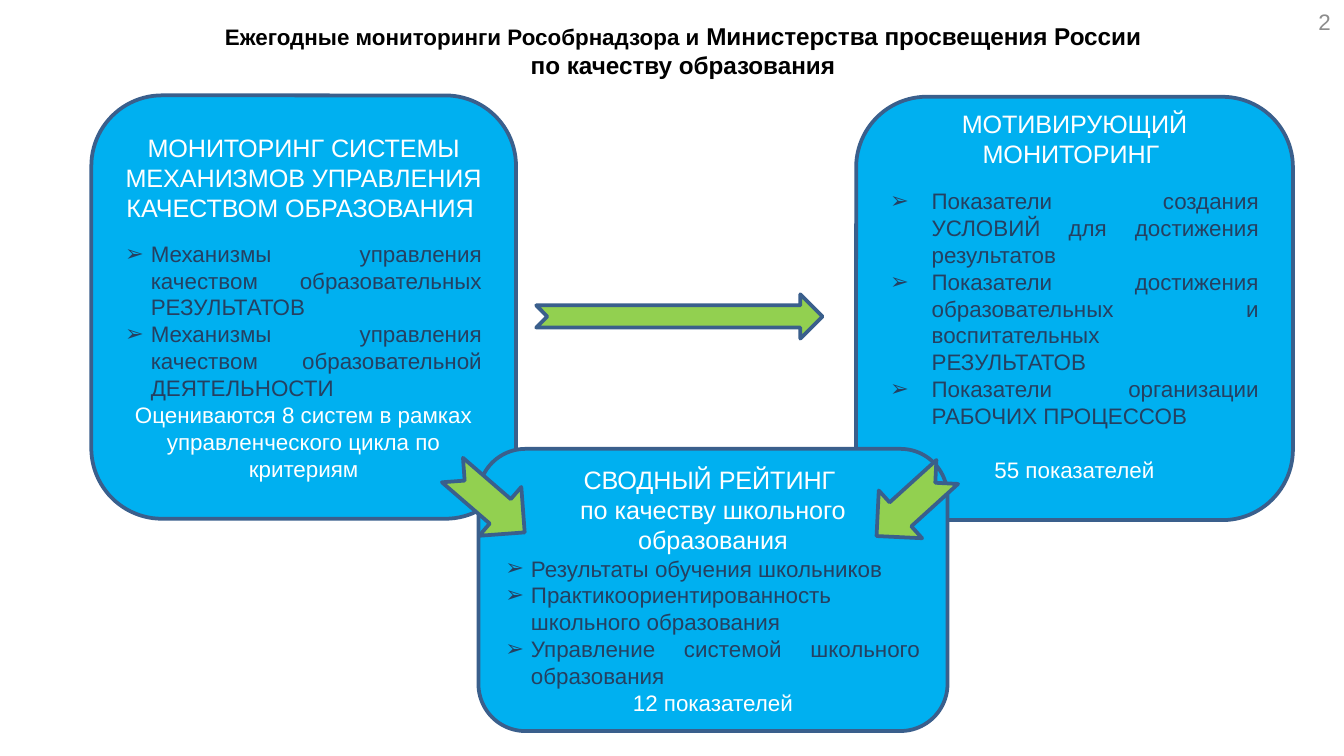
from lxml import etree
from pptx import Presentation
from pptx.dml.color import RGBColor
from pptx.enum import shapes, text
from pptx.oxml.ns import qn
from pptx.util import Inches, Pt

BLUE = RGBColor(0x00, 0xB0, 0xF0)
GREEN = RGBColor(0x92, 0xD0, 0x50)
OUTLINE = RGBColor(0x3A, 0x5F, 0x8C)
NAVY = RGBColor(0x25, 0x40, 0x61)
WHITE = RGBColor(0xFF, 0xFF, 0xFF)
BLACK = RGBColor(0x00, 0x00, 0x00)
GREY = RGBColor(0x8C, 0x8C, 0x8C)

SHAPE = shapes.MSO_SHAPE
ALIGN = text.PP_ALIGN


def format_run(r, size, color, bold=False):
    r.font.name = "Arial"
    r.font.size = Pt(size)
    r.font.color.rgb = color
    r.font.bold = bold


def add_bullet(p, indent):
    pPr = p._p.get_or_add_pPr()
    pPr.set("marL", str(Inches(indent)))
    pPr.set("indent", str(-Inches(indent)))
    etree.SubElement(pPr, qn("a:buFont")).set("typeface", "Arial")
    etree.SubElement(pPr, qn("a:buChar")).set("char", "➢")


def add_label(slide, box, align, runs):
    """Text box whose runs are (wording, size, color, bold)."""
    tf = slide.shapes.add_textbox(*map(Inches, box)).text_frame
    tf.word_wrap = True
    tf.vertical_anchor = text.MSO_ANCHOR.MIDDLE
    p = tf.paragraphs[0]
    p.alignment = align
    for wording, *style in runs:
        # a vertical tab in the wording stands for a line break
        for i, line in enumerate(wording.split("\v")):
            if i:
                p.add_line_break()
            r = p.add_run()
            r.text = line
            format_run(r, *style)


def add_filled_shape(slide, kind, box, fill):
    sp = slide.shapes.add_shape(kind, *map(Inches, box))
    sp.shadow.inherit = False
    sp.fill.solid()
    sp.fill.fore_color.rgb = fill
    sp.line.color.rgb = OUTLINE
    sp.line.width = Pt(2)
    return sp


def add_card(slide, box, headings, bullets, footer, indent=0.19,
             bullet_gap=0, footer_gap=0, bottom=0.05):
    tf = add_filled_shape(slide, SHAPE.ROUNDED_RECTANGLE, box, BLUE).text_frame
    tf.word_wrap = True
    tf.vertical_anchor = text.MSO_ANCHOR.MIDDLE
    tf.margin_bottom = Inches(bottom)
    tf.text = "\n".join([*headings, *bullets, footer])
    first = len(headings)
    last = first + len(bullets)
    for i, p in enumerate(tf.paragraphs):
        is_bullet = first <= i < last
        p.alignment = ALIGN.JUSTIFY if is_bullet else ALIGN.CENTER
        if is_bullet:
            add_bullet(p, indent)
        format_run(p.runs[0], 13.5 if i < first else 12,
                   NAVY if is_bullet else WHITE)
    if bullet_gap:
        tf.paragraphs[first].space_before = Pt(bullet_gap)
    if footer_gap:
        tf.paragraphs[last].space_before = Pt(footer_gap)


def add_arrow(slide, box, rotation=0):
    sp = add_filled_shape(slide, SHAPE.NOTCHED_RIGHT_ARROW, box, GREEN)
    sp.rotation = rotation


def main():
    prs = Presentation()
    prs.slide_width = Inches(10)
    prs.slide_height = prs.slide_width * 9 // 16
    slide = prs.slides.add_slide(prs.slide_layouts[6])

    add_label(slide, (0.69, 0.04, 8.83, 0.67), ALIGN.CENTER, [
        ("Ежегодные мониторинги Рособрнадзора и ", 12, BLACK, True),
        ("Министерства просвещения России \vпо качеству образования ",
         13, BLACK, True)])
    add_label(slide, (7.67, 0.01, 2.33, 0.3), ALIGN.RIGHT, [("2", 12, GREY)])

    add_card(slide, (0.68, 0.71, 3.16, 3.15),
             ["МОНИТОРИНГ СИСТЕМЫ МЕХАНИЗМОВ УПРАВЛЕНИЯ КАЧЕСТВОМ ОБРАЗОВАНИЯ "],
             ["Механизмы управления качеством образовательных РЕЗУЛЬТАТОВ ",
              "Механизмы управления качеством образовательной ДЕЯТЕЛЬНОСТИ "],
             "Оцениваются 8 систем в рамках управленческого цикла по критериям",
             bullet_gap=9)
    add_card(slide, (6.37, 0.72, 3.25, 3.15),
             ["МОТИВИРУЮЩИЙ МОНИТОРИНГ "],
             ["Показатели создания УСЛОВИЙ для достижения результатов",
              "Показатели достижения образовательных и воспитательных РЕЗУЛЬТАТОВ",
              "Показатели организации РАБОЧИХ ПРОЦЕССОВ"],
             "55 показателей",
             indent=0.31, bullet_gap=10, footer_gap=14.5, bottom=0.24)
    add_card(slide, (3.56, 3.34, 3.49, 2.1),
             ["СВОДНЫЙ РЕЙТИНГ ", "по качеству школьного образования"],
             ["Результаты обучения школьников",
              "Практикоориентированность школьного образования",
              "Управление системой школьного образования"],
             "12 показателей")

    add_arrow(slide, (3.99, 2.19, 2.13, 0.33))
    add_arrow(slide, (3.28, 3.49, 0.71, 0.48), 40.8)
    add_arrow(slide, (6.43, 3.51, 0.71, 0.48), 137.8)

    prs.save("out.pptx")


if __name__ == "__main__":
    main()
